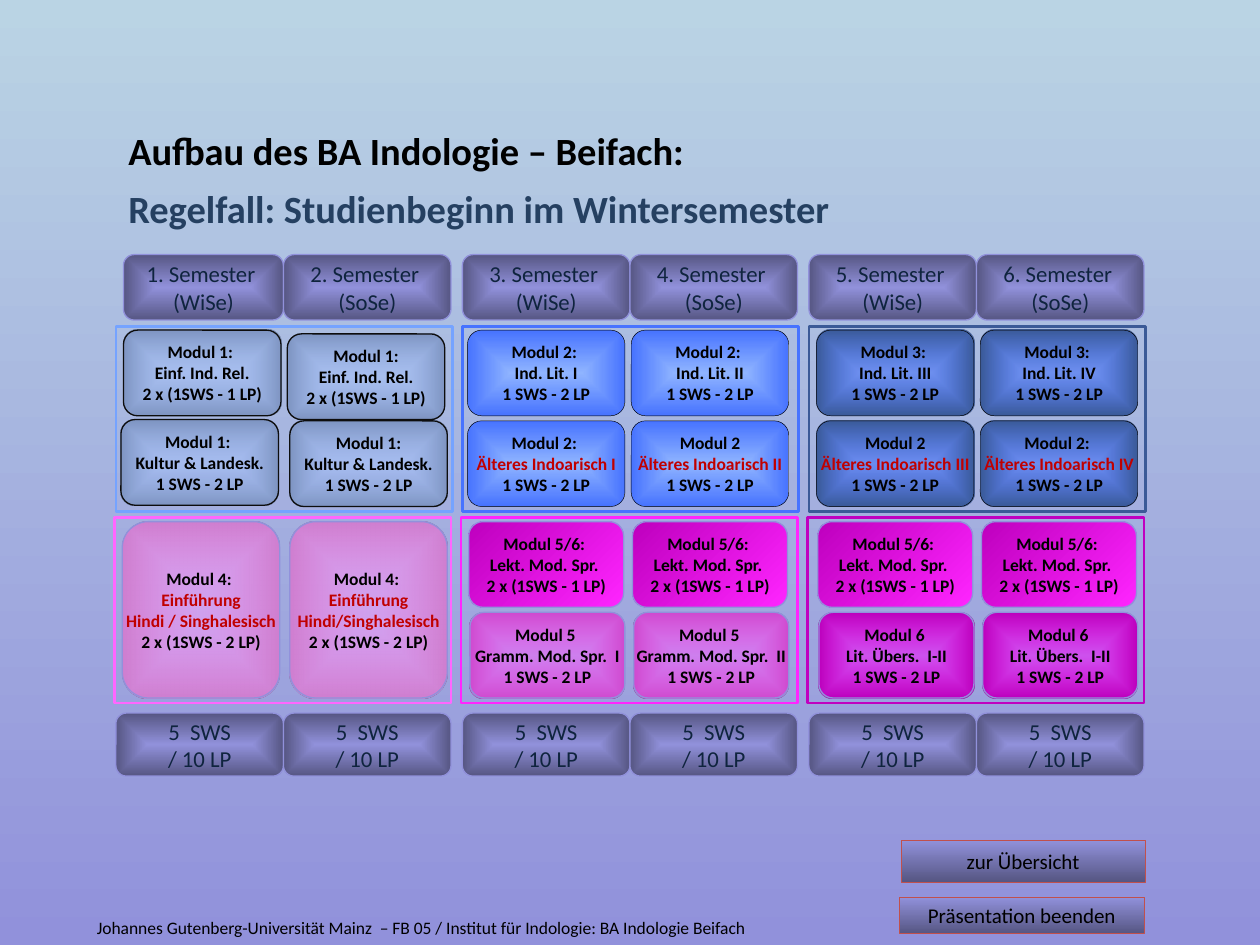
import pptx
import pptx.dml.color
import pptx.enum.shapes
import pptx.enum.text
import pptx.oxml
import pptx.oxml.ns
import pptx.util

FORM = pptx.enum.shapes.MSO_SHAPE
LEFT, YEAR, TERM = 0.92, 2.75, 1.33
ROWS = (2.59, 4.11)
RED = ("Älteres", "Einführung", "Hindi")
FRAMES = (("75A3FF", "4773FF", "3B5A97"), ("FF66FF", "FF25FF", "C000C0"))
TONES = {
    "head": ("9191DB", "565683", 100, "9191DB", 0.75),
    "steel": ("A7C4FF", "7E94C1", 50, "0D0D0D", 0.75),
    "sky": ("8FB4FF", "4773FF", 100, "000000", 0.25),
    "navy": ("3366FF", "3B5A97", 50, "000000", 0.25),
    "rose": ("FF9BFF", "CF7ECF", 50, "9191DB", 0.75),
    "pink": ("FF5BFF", "CF4ACF", 50, "9191DB", 0.75),
    "plum": ("FF00FF", "BC00BC", 50, "9191DB", 0.75),
    "neon": ("FF25FF", "BE00BE", 100, "9191DB", 0.75),
    "link": ("9191DB", "565683", 100, "C0504D", 0.25),
}
ANGLES = {"neon": 225, "link": 90}
FIRST = (
    (0.98, 2.62, 0.68, "steel", "Modul 1: \nEinf. Ind. Rel.\n2 x (1SWS - 1 LP)"),
    (0.96, 3.33, 0.68, "steel", "Modul 1: \nKultur & Landesk.\n1 SWS - 2 LP"),
    (0.97, 4.14, 1.4, "rose",
     "Modul 4: \nEinführung\nHindi / Singhalesisch\n2 x (1SWS - 2 LP)"),
    (2.3, 4.14, 1.4, "rose",
     "Modul 4: \nEinführung\nHindi/Singhalesisch\n2 x (1SWS - 2 LP)"),
    (2.28, 2.65, 0.68, "steel", "Modul 1:\nEinf. Ind. Rel.\n2 x (1SWS - 1 LP)"),
    (2.3, 3.34, 0.68, "steel", "Modul 1:\nKultur & Landesk.\n1 SWS - 2 LP"),
)
LATER = (
    ("sky", "Modul 2: ", "I", "Modul 2: ", "pink", "Modul 5 \nGramm. Mod. Spr.  I"),
    ("sky", "Modul 2: ", "II", "Modul 2", "pink", "Modul 5 \nGramm. Mod. Spr.  II"),
    ("navy", "Modul 3: ", "III", "Modul 2", "plum", "Modul 6 \nLit. Übers.  I-II"),
    ("navy", "Modul 3: ", "IV", "Modul 2: ", "plum", "Modul 6 \nLit. Übers.  I-II"),
)


def paint(code):
    """Turn a hex string into a colour."""
    return pptx.dml.color.RGBColor.from_string(code)


def blend(fill, start, end, angle):
    """Set a two-colour gradient running clockwise from the right by angle."""
    fill.gradient()
    fill.gradient_angle = (360 - angle) % 360
    for stop, code, place in zip(fill.gradient_stops, (start, end), (0, 1)):
        stop.color.rgb = paint(code)
        stop.position = place


def glow(shape, alpha):
    """Make the gradient spread from the centre, its first colour at alpha percent."""
    name = pptx.oxml.ns.qn
    grad = shape._element.spPr.find(name("a:gradFill"))
    core = pptx.oxml.parse_xml(
        f'<a:path {pptx.oxml.ns.nsdecls("a")} path="shape">'
        '<a:fillToRect l="50000" t="50000" r="50000" b="50000"/></a:path>')
    grad.replace(grad.find(name("a:lin")), core)
    if alpha < 100:
        tint = grad.find(".//" + name("a:srgbClr"))
        tint.append(pptx.oxml.parse_xml(
            f'<a:alpha {pptx.oxml.ns.nsdecls("a")} val="{alpha * 1000}"/>'))


def write(frame, text, size, color, bold=False):
    """Fill a text frame and format its runs."""
    frame.text = text
    for para in frame.paragraphs:
        for run in para.runs:
            font = run.font
            font.name, font.size, font.bold = "Calibri", pptx.util.Pt(size), bold
            font.color.rgb = paint("C00000" if run.text.startswith(RED) else color)


def shape(slide, form, box, line, width):
    """Add an outlined preset shape."""
    item = slide.shapes.add_shape(form, *map(pptx.util.Inches, box))
    item.shadow.inherit = False
    item.line.color.rgb = paint(line)
    item.line.width = pptx.util.Pt(width)
    return item


def frame(slide, box, line):
    """Add an empty frame around a group of modules."""
    shape(slide, FORM.RECTANGLE, box, line, 1.5).fill.background()


def card(slide, box, tone, text, size=10, color="000000", bold=True):
    """Add a filled box with centred lines."""
    start, end, alpha, line, width = TONES[tone]
    form = FORM.RECTANGLE if tone == "link" else FORM.ROUNDED_RECTANGLE
    item = shape(slide, form, box, line, width)
    blend(item.fill, start, end, ANGLES.get(tone, 0))
    if tone not in ANGLES:
        glow(item, alpha)
    body = item.text_frame
    write(body, text, size, color, bold)
    body.word_wrap = False
    body.vertical_anchor = pptx.enum.text.MSO_ANCHOR.MIDDLE
    for para in body.paragraphs:
        para.alignment = pptx.enum.text.PP_ALIGN.CENTER


def label(slide, box, text, size, color="000000", bold=False):
    """Add a wrapped text box and return its paragraph."""
    body = slide.shapes.add_textbox(*map(pptx.util.Inches, box)).text_frame
    body.word_wrap = True
    write(body, text, size, color, bold)
    return body.paragraphs[0]


def terms(slide):
    """Add the semester heads and the sums below them."""
    for col in range(6):
        left = LEFT + col // 2 * YEAR + col % 2 * TERM
        trim = 0 if col else 0.06
        season = "SoSe" if col % 2 else "WiSe"
        card(slide, (left + trim, 2.02, TERM - trim, 0.52), "head",
             f"{col + 1}. Semester \n({season})", 13, "0F243E", False)
        card(slide, (left, 5.66, TERM, 0.5), "head",
             "5  SWS\n/ 10 LP", 13, "0F243E", False)


def later(slide):
    """Add the modules of the second and third year."""
    for col, (tone, lit, part, old, last, title) in enumerate(LATER):
        left = 3.71 + col // 2 * 2.77 + col % 2 * 1.3
        card(slide, (left, 2.62, 1.25, 0.68), tone,
             f"{lit}\nInd. Lit. {part}\n1 SWS - 2 LP")
        card(slide, (left, 3.34, 1.25, 0.68), tone,
             f"{old}\nÄlteres Indoarisch {part}\n1 SWS - 2 LP")
        card(slide, (left + 0.01, 4.14, 1.23, 0.68), "neon",
             "Modul 5/6: \nLekt. Mod. Spr. \n2 x (1SWS - 1 LP)")
        card(slide, (left + 0.02, 4.86, 1.23, 0.68), last, f"{title}\n1 SWS - 2 LP")


def main():
    """Build the slide and save it."""
    deck = pptx.Presentation()
    deck.slide_width, deck.slide_height = map(pptx.util.Inches, (10, 7.5))
    slide = deck.slides.add_slide(deck.slide_layouts[6])
    blend(slide.background.fill, "BAD4E4", "9191DB", 90)
    para = label(slide, (LEFT, 1, 5.5, 0.42),
                 "Aufbau des BA Indologie – Beifach:", 22, bold=True)
    para.line_spacing = 0.9
    label(slide, (LEFT, 1.42, 8.18, 0.47),
          "Regelfall: Studienbeginn im Wintersemester", 22, "254061", True)
    terms(slide)
    for row, (top, lines) in enumerate(zip(ROWS, FRAMES)):
        for year, line in enumerate(lines):
            frame(slide, (LEFT + year * YEAR - row * 0.01, top, 2.67, 1.47), line)
    for left, top, height, tone, text in FIRST:
        card(slide, (left, top, 1.25, height), tone, text)
    later(slide)
    card(slide, (7.15, 6.67, 1.94, 0.33), "link", "zur Übersicht", 12, bold=False)
    card(slide, (7.14, 7.12, 1.94, 0.29), "link", "Präsentation beenden", 12, bold=False)
    label(slide, (0.67, 7.23, 6.92, 0.27),
          "Johannes Gutenberg-Universität Mainz  – FB 05 / "
          "Institut für Indologie: BA Indologie Beifach", 10)
    deck.save("out.pptx")


if __name__ == "__main__":
    main()
